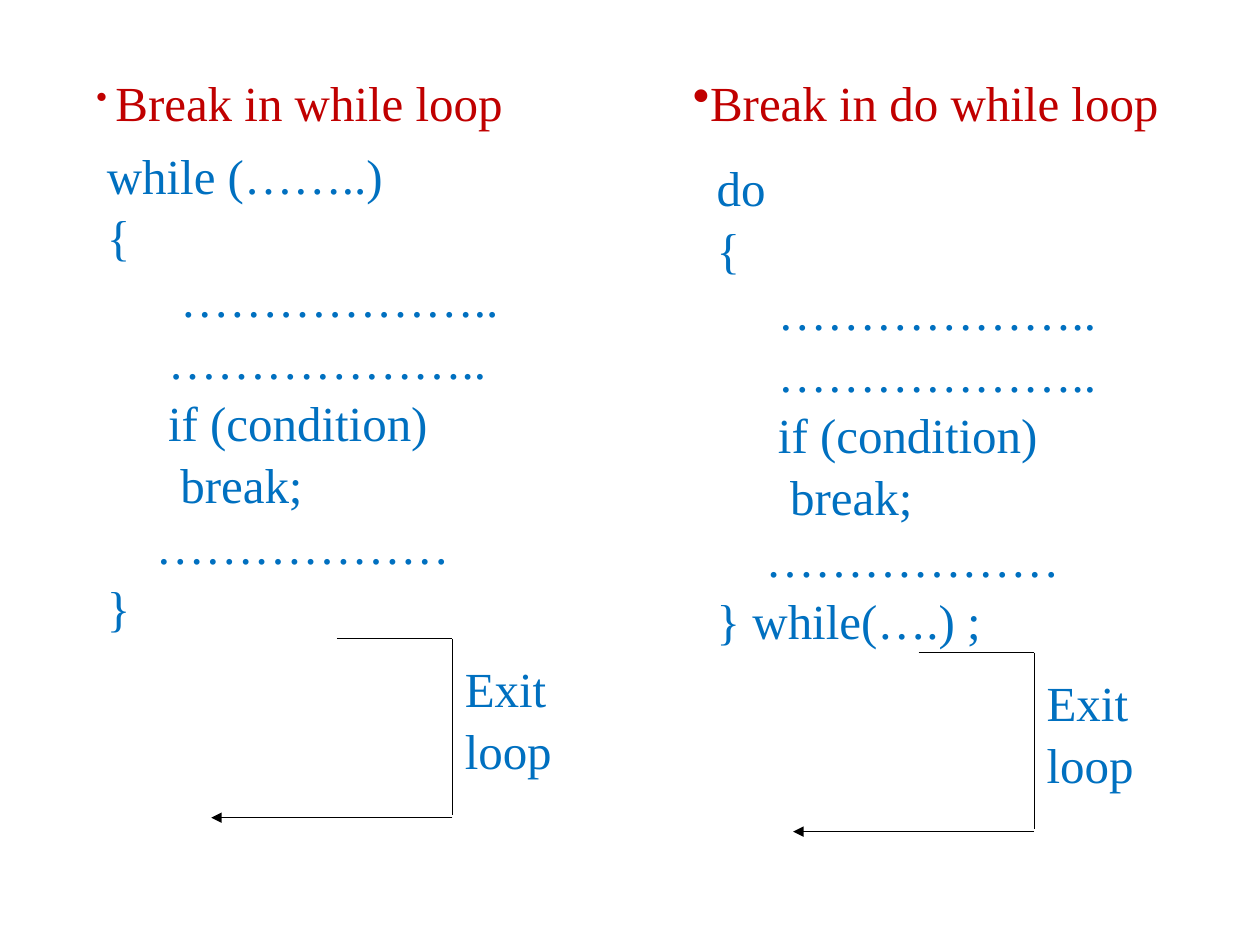
from dataclasses import dataclass

from lxml.etree import SubElement
from pptx import Presentation
from pptx.dml.color import RGBColor
from pptx.enum.shapes import MSO_CONNECTOR as Line
from pptx.oxml.ns import qn
from pptx.util import Pt


@dataclass(frozen=True)
class Theme:
    font: str = "Times New Roman"
    heading: RGBColor = RGBColor(0xC0, 0x00, 0x00)
    code: RGBColor = RGBColor(0x00, 0x70, 0xC0)
    line: RGBColor = RGBColor(0x00, 0x00, 0x00)
    size: float = 28
    small: float = 18
    line_width: float = 0.75
    spacing: float = 1.05


@dataclass(frozen=True)
class Box:
    left: float
    top: float
    width: float
    height: float


@dataclass(frozen=True)
class CodeLine:
    text: str
    spaces: int = 0


@dataclass(frozen=True)
class Example:
    heading: str
    heading_box: Box
    small_gap: bool
    code: tuple[CodeLine, ...]
    code_box: Box
    exit_x: float
    exit_y: float


THEME = Theme()
SPACE = THEME.size / 4  # width of one space in the code font
DOTS = "………………"
BODY = (
    CodeLine(DOTS + "..", 5),
    CodeLine("if (condition)", 5),
    CodeLine("break;", 6),
    CodeLine(DOTS, 4),
)
EXAMPLES = (
    Example(
        "Break in while loop", Box(48, 36, 276, 74), True,
        (CodeLine("while (……..)"), CodeLine("{"), CodeLine(DOTS + "..", 6),
         *BODY, CodeLine("}")),
        Box(54, 77.75, 307.5, 369.5), 258.5, 365,
    ),
    Example(
        "Break in do while loop", Box(388.8, 36, 307.5, 438), False,
        (CodeLine("do"), CodeLine("{"), CodeLine(DOTS + "..", 5),
         *BODY, CodeLine("} while(….) ;")),
        Box(402.5, 85, 251.5, 379.5), 591, 373,
    ),
)


def add_text_frame(slide, box: Box):
    sp = slide.shapes.add_textbox(
        Pt(box.left), Pt(box.top), Pt(box.width), Pt(box.height))
    tf = sp.text_frame
    tf.word_wrap = True
    return tf


def add_run(p, text: str, color: RGBColor, size: float = THEME.size) -> None:
    r = p.add_run()
    r.text = text
    r.font.name = THEME.font
    r.font.size = Pt(size)
    r.font.color.rgb = color


def add_heading(slide, example: Example) -> None:
    p = add_text_frame(slide, example.heading_box).paragraphs[0]
    p.line_spacing = THEME.spacing
    SubElement(p._p.get_or_add_pPr(), qn("a:buChar")).set("char", "•")
    if example.small_gap:
        add_run(p, " ", THEME.heading, THEME.small)
    add_run(p, example.heading, THEME.heading)


def add_code(slide, box: Box, lines: tuple[CodeLine, ...]) -> None:
    tf = add_text_frame(slide, box)
    for i, line in enumerate(lines):
        p = tf.paragraphs[0] if i == 0 else tf.add_paragraph()
        p.line_spacing = THEME.spacing
        if line.spaces:
            p._p.get_or_add_pPr().set("marL", str(Pt(line.spaces * SPACE)))
        add_run(p, line.text, THEME.code)


def add_line(slide, x1: float, y1: float, x2: float, y2: float,
             arrow: bool = False) -> None:
    s = slide.shapes.add_connector(
        Line.STRAIGHT, Pt(x1), Pt(y1), Pt(x2), Pt(y2))
    s.line.color.rgb = THEME.line
    s.line.width = Pt(THEME.line_width)
    if arrow:
        SubElement(s.line._get_or_add_ln(), qn("a:tailEnd")).set(
            "type", "triangle")
    SubElement(s._element.spPr, qn("a:effectLst"))


def add_exit(slide, x: float, y: float) -> None:
    """Draw the way out of the loop; (x, y) is its top right corner."""
    add_line(slide, x - 66, y, x, y)
    add_line(slide, x, y, x, y + 101)
    add_line(slide, x, y + 102.25, x - 137.75, y + 102.25, arrow=True)
    add_code(slide, Box(x, y + 6, 95, 62), (CodeLine("Exit loop"),))


def main() -> None:
    prs = Presentation()
    prs.slide_width, prs.slide_height = Pt(720), Pt(540)
    slide = prs.slides.add_slide(prs.slide_layouts[6])
    for example in EXAMPLES:
        add_heading(slide, example)
        add_code(slide, example.code_box, example.code)
        add_exit(slide, example.exit_x, example.exit_y)
    prs.save("out.pptx")


if __name__ == "__main__":
    main()
